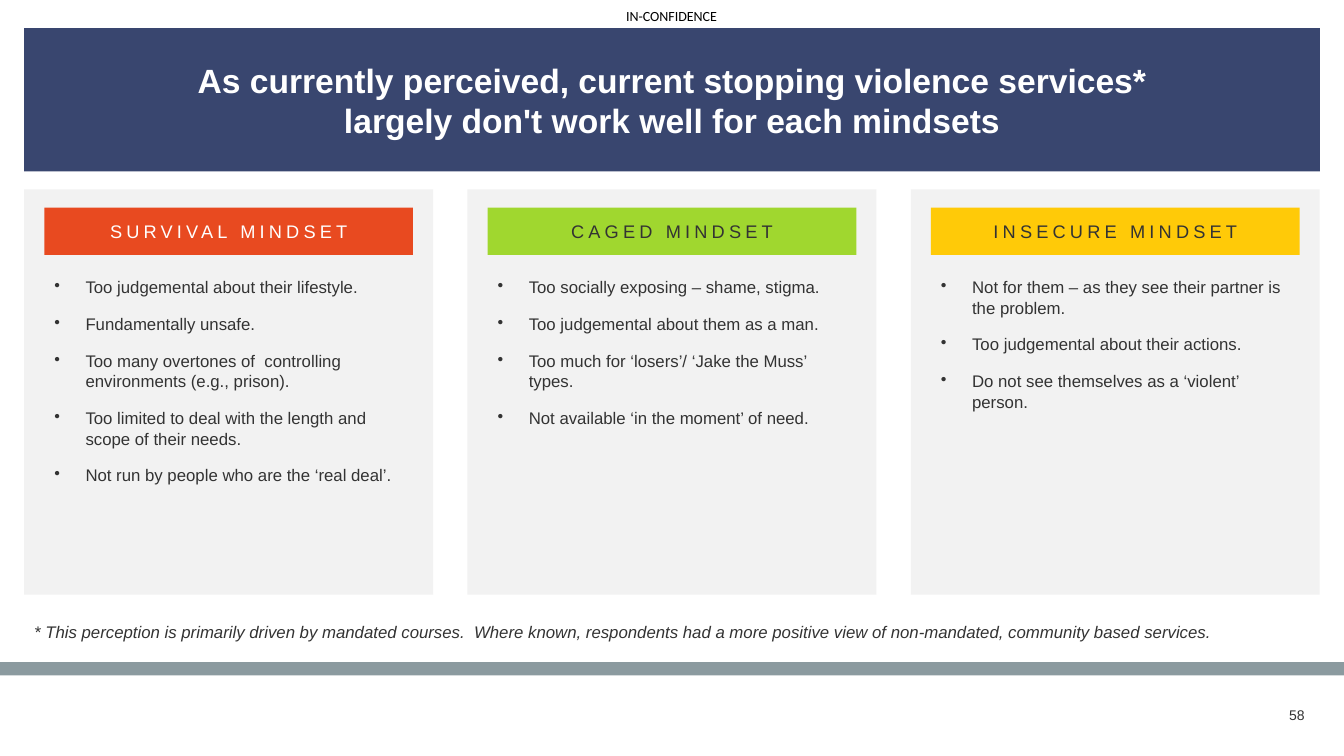
"""Build the slide on how stopping violence services fit each mindset."""
from lxml.etree import SubElement
from pptx import Presentation
from pptx.dml.color import RGBColor
from pptx.enum.shapes import MSO_SHAPE as Shape
from pptx.enum.text import MSO_ANCHOR as Anchor, PP_ALIGN as Align
from pptx.oxml.ns import qn
from pptx.util import Inches, Pt

NAVY = RGBColor(0x39, 0x46, 0x6F)
WHITE = RGBColor(0xFF, 0xFF, 0xFF)
BLACK = RGBColor(0, 0, 0)
INK = RGBColor(0x33, 0x33, 0x33)
PALE = RGBColor(0xF2, 0xF2, 0xF2)
GREY = RGBColor(0x8B, 0x9A, 0x9F)
RED = RGBColor(0xE8, 0x4A, 0x20)
GREEN = RGBColor(0xA0, 0xD7, 0x2F)
GOLD = RGBColor(0xFF, 0xCA, 0x08)

MARK = "IN-CONFIDENCE"
TITLE = ("As currently perceived, current stopping violence services*\v"
         "largely don't work well for each mindsets")
NOTE = ("* This perception is primarily driven by mandated courses.  Where known, "
        "respondents had a more positive view of non-mandated, community based services.")
PAGE = "58"
MINDSETS = [
    ("SURVIVAL MINDSET", RED, WHITE, [
        "Too judgemental about their lifestyle.",
        "Fundamentally unsafe.",
        "Too many overtones of  controlling environments (e.g., prison).",
        "Too limited to deal with the length and scope of their needs.",
        "Not run by people who are the ‘real deal’."]),
    ("CAGED MINDSET", GREEN, INK, [
        "Too socially exposing – shame, stigma.",
        "Too judgemental about them as a man.",
        "Too much for ‘losers’/ ‘Jake the Muss’ types.",
        "Not available ‘in the moment’ of need."]),
    ("INSECURE MINDSET", GOLD, INK, [
        "Not for them – as they see their partner is the problem.",
        "Too judgemental about their actions.",
        "Do not see themselves as a ‘violent’ person."]),
]

WIDE, HIGH = 13.33, 7.5
EDGE, GAP, PAD = 0.24, 0.34, 0.2
FULL = WIDE - 2 * EDGE
COL = (FULL - GAP * (len(MINDSETS) - 1)) / len(MINDSETS)
TOP, DEPTH = 1.88, 4.02
INDENT = 0.31

deck = Presentation()
deck.slide_width, deck.slide_height = Inches(WIDE), Inches(HIGH)
slide = deck.slides.add_slide(deck.slide_layouts[6])


def block(left, top, width, height, color):
    """Add a plain filled rectangle."""
    rect = slide.shapes.add_shape(Shape.RECTANGLE, *map(Inches, (left, top, width, height)))
    rect.shadow.inherit = False
    rect.fill.solid()
    rect.fill.fore_color.rgb = color
    rect.line.fill.background()
    return rect


def area(left, top, width, height):
    """Add an empty text box."""
    return slide.shapes.add_textbox(*map(Inches, (left, top, width, height)))


def write(shape, *lines, size=12, color=INK, face="Arial", bold=False, italic=False,
          align=Align.LEFT, anchor=Anchor.TOP, inset=None, wrap=True, track=0, bullet=None):
    """Fill a shape with formatted paragraphs."""
    frame = shape.text_frame
    frame.word_wrap, frame.vertical_anchor = wrap, anchor
    if inset is not None:
        frame.margin_left = frame.margin_right = Inches(inset)
        frame.margin_top = frame.margin_bottom = Inches(inset)
    for n, line in enumerate(lines):
        para = frame.add_paragraph() if n else frame.paragraphs[0]
        para.text, para.alignment = line, align
        if n:
            para.space_before = Pt(12)
        if bullet:
            props = para._p.get_or_add_pPr()
            props.set("marL", str(Inches(INDENT)))
            props.set("indent", str(-Inches(INDENT)))
            SubElement(props, qn("a:buChar")).set("char", bullet)
        for run in para.runs:
            font = run.font
            font.size, font.name, font.color.rgb = Pt(size), face, color
            font.bold, font.italic = bold, italic
            if track:
                run._r.get_or_add_rPr().set("spc", str(track * 100))


write(area(12.56, 6.99, 0.38, 0.21), PAGE, size=10, align=Align.RIGHT,
      anchor=Anchor.MIDDLE, inset=0)
block(0, 6.57, WIDE, 0.13, GREY)
write(area(6.21, 0.07, 0.94, 0.17), MARK, size=10, color=BLACK, face="Calibri",
      inset=0, wrap=False)
write(block(EDGE, 0.28, FULL, 1.42, NAVY), TITLE, size=24, color=WHITE, bold=True,
      align=Align.CENTER, anchor=Anchor.MIDDLE)
write(area(EDGE, 6.12, FULL, 0.3), NOTE, italic=True)

for n, (name, fill, ink, points) in enumerate(MINDSETS):
    left = EDGE + n * (COL + GAP)
    inner, width = left + PAD, COL - 2 * PAD
    block(left, TOP, COL, DEPTH, PALE)
    write(block(inner, TOP + 0.18, width, 0.47, fill), name, size=13, color=ink,
          align=Align.CENTER, anchor=Anchor.MIDDLE, track=3)
    write(area(inner, TOP + 0.82, width, 2.67), *points, bullet="•")

deck.save("out.pptx")
